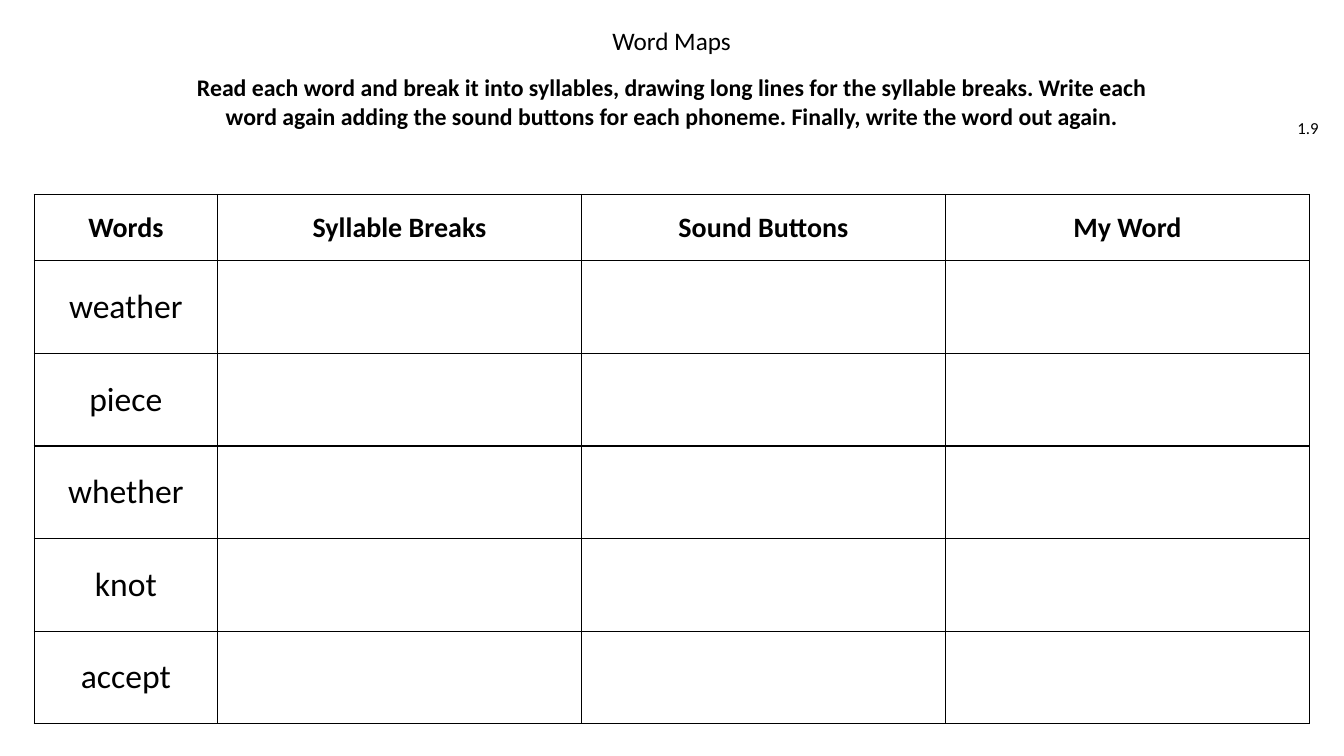
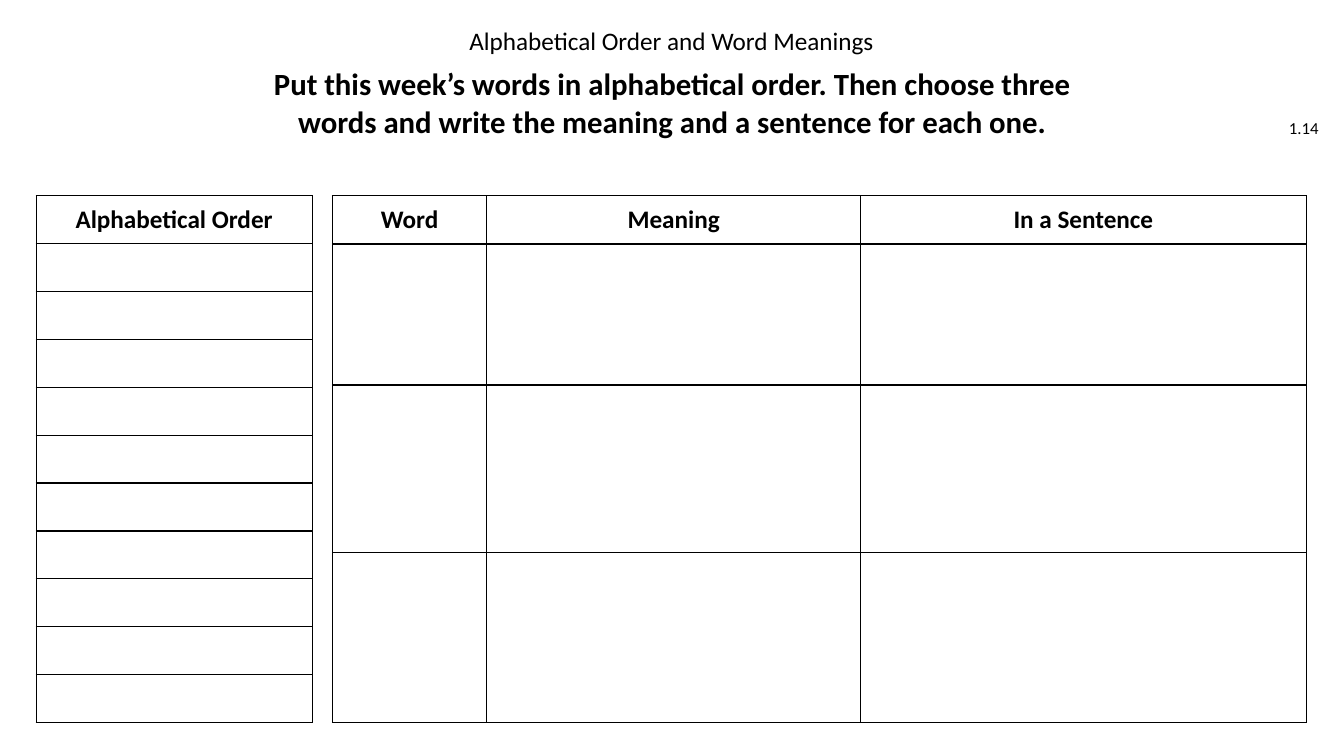
import pptx
import pptx.dml.color
import pptx.enum.text
import pptx.oxml
import pptx.oxml.ns
import pptx.util

Cm, Pt = pptx.util.Cm, pptx.util.Pt
PP_ALIGN = pptx.enum.text.PP_ALIGN
ANCHOR = pptx.enum.text.MSO_ANCHOR

BLACK = pptx.dml.color.RGBColor(0, 0, 0)
FONT = "Calibri"
BORDER = Pt(1)

# Text formats
TITLE = {"font": {"size": Pt(18)}, "para": {"line_spacing": 0.9}}
NUMBER = {"font": {"size": Pt(12)}, "para": {"alignment": PP_ALIGN.RIGHT},
          "anchor": ANCHOR.MIDDLE}
WORD = {"font": {"size": Pt(24)}}

# Boxes in cm: left, top, width, height
TITLE_BOX = (9.7, 0.61, 14.45, 0.89)
NUMBER_BOX = (31.88, 2.72, 1.6, 1.02)
MAP_BOX = (0.86, 4.9, 32.14, 13.34)
ORDER_BOX = (0.91, 4.93, 6.96, 13.28)
MEANING_BOX = (8.38, 4.93, 24.54, 13.28)


def bold(size, line_spacing=None):
    return {"font": {"size": Pt(size), "bold": True},
            "para": {"line_spacing": line_spacing}, "anchor": ANCHOR.MIDDLE}


def write(tf, lines, style):
    """Fill a text frame with one paragraph per line."""
    for i, line in enumerate(lines):
        p = tf.add_paragraph() if i else tf.paragraphs[0]
        for name, value in {"alignment": PP_ALIGN.CENTER, **style.get("para", {})}.items():
            setattr(p, name, value)
        r = p.add_run()
        r.text = line
        r.font.color.rgb = BLACK
        for name, value in {"name": FONT, **style["font"]}.items():
            setattr(r.font, name, value)


def add_text(s, box, lines, style):
    tf = s.shapes.add_textbox(*map(Cm, box)).text_frame
    tf.word_wrap = True
    tf.vertical_anchor = style.get("anchor", ANCHOR.TOP)
    write(tf, lines, style)


def add_heading(s, title, number, box, lines, style):
    """Title, page number and bold instructions at the top of a sheet."""
    add_text(s, TITLE_BOX, [title], TITLE)
    add_text(s, NUMBER_BOX, [number], NUMBER)
    add_text(s, box, lines, style)


def set_borders(cell):
    tc_pr = cell._tc.get_or_add_tcPr()
    for side in ("lnL", "lnR", "lnT", "lnB"):
        tc_pr.append(pptx.oxml.parse_xml(
            f'<a:{side} {pptx.oxml.ns.nsdecls("a")} w="{BORDER}"><a:solidFill>'
            f'<a:srgbClr val="{BLACK}"/></a:solidFill></a:{side}>'))


def add_grid(s, box, headers, head_style, col_shares, row_shares, words=()):
    """Ruled table whose columns and rows share out the box."""
    _, _, width, height = box
    table = s.shapes.add_table(len(row_shares), len(headers), *map(Cm, box)).table
    table.first_row = table.horz_banding = False
    for col, share in zip(table.columns, col_shares):
        col.width = Cm(width * share / sum(col_shares))
    for row, share in zip(table.rows, row_shares):
        row.height = Cm(height * share / sum(row_shares))
    for cell in table.iter_cells():
        set_borders(cell)
        cell.fill.background()
        cell.vertical_anchor = ANCHOR.MIDDLE
    for c, header in enumerate(headers):
        write(table.cell(0, c).text_frame, [header], head_style)
    for r, word in enumerate(words, 1):
        write(table.cell(r, 0).text_frame, [word], WORD)


def word_maps(s):
    add_heading(s, "Word Maps", "1.9", (4.22, 1.52, 25.43, 2.08), [
        "Read each word and break it into syllables, drawing long lines for the "
        "syllable breaks. Write each word again adding the sound buttons for each "
        "phoneme. Finally, write the word out again."], bold(17))
    words = ["weather", "piece", "whether", "knot", "accept"]
    add_grid(s, MAP_BOX, ["Words", "Syllable Breaks", "Sound Buttons", "My Word"],
             bold(20), [1.82] + [3.61] * 3, [0.66] + [0.92] * len(words), words)


def word_meanings(s):
    add_heading(s, "Alphabetical Order and Word Meanings", "1.14",
                (5, 1.52, 23.88, 2.08), [
                    "Put this week’s words in alphabetical order. Then choose three",
                    "words and write the meaning and a sentence for each one."],
                bold(22, Pt(27)))
    add_grid(s, MEANING_BOX, ["Word", "Meaning", "In a Sentence"], bold(18),
             [1.53, 3.71, 4.42], [0.48, 1.4, 1.66, 1.69])
    add_grid(s, ORDER_BOX, ["Alphabetical Order"], bold(18), [1], [1] * 11)


def main():
    prs = pptx.Presentation()
    prs.slide_width, prs.slide_height = Cm(33.87), Cm(19.05)
    for build in (word_maps, word_meanings):
        build(prs.slides.add_slide(prs.slide_layouts[6]))
    prs.save("out.pptx")


if __name__ == "__main__":
    main()
